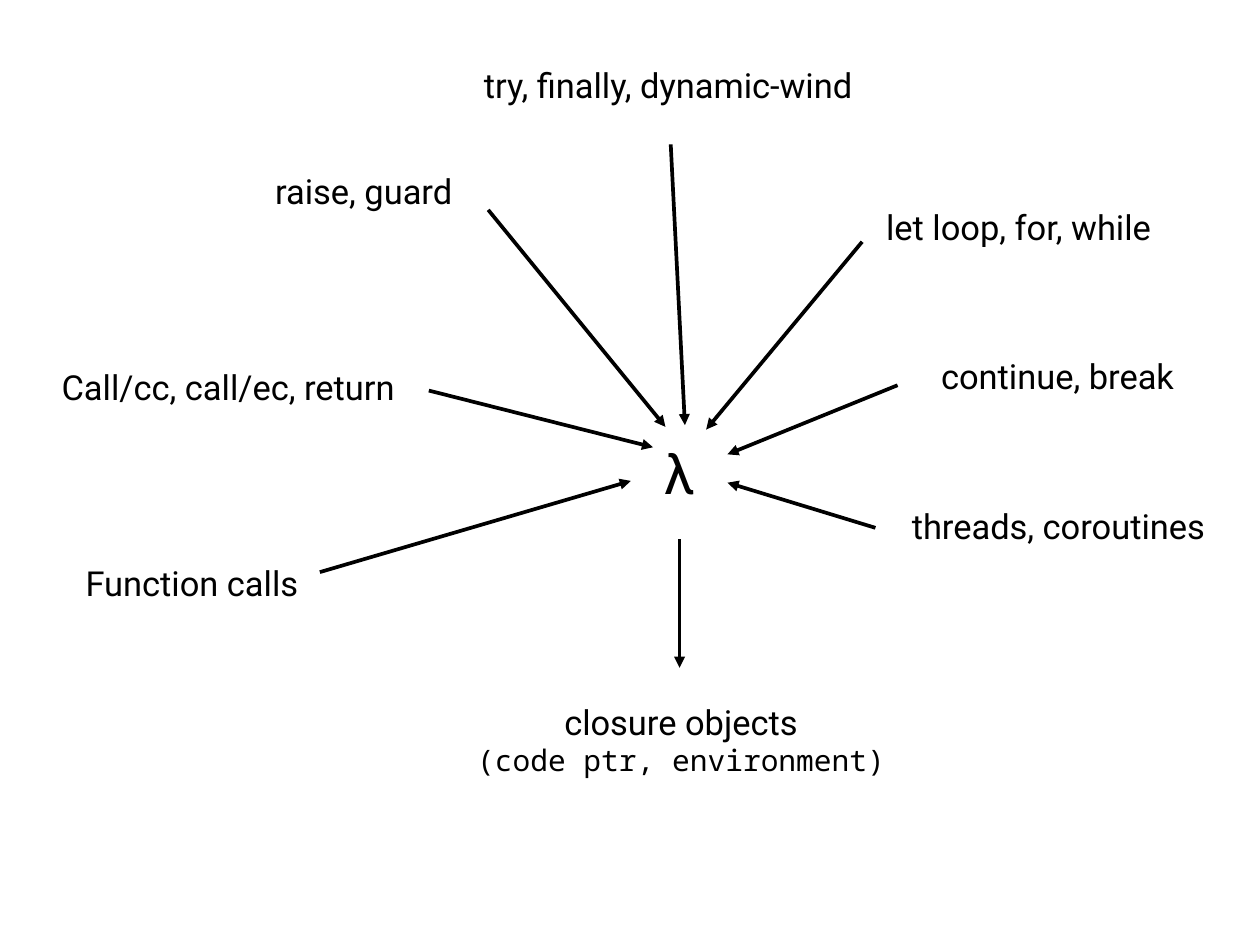
from pptx import Presentation
from pptx.dml.color import RGBColor
from pptx.enum.shapes import MSO_CONNECTOR
from pptx.enum.text import MSO_ANCHOR, MSO_AUTO_SIZE, PP_ALIGN
from pptx.oxml.ns import qn
from pptx.util import Inches, Pt
from lxml import etree

STRAIGHT = MSO_CONNECTOR.STRAIGHT
MIDDLE = MSO_ANCHOR.MIDDLE
CENTER = PP_ALIGN.CENTER
GROW = MSO_AUTO_SIZE.SHAPE_TO_FIT_TEXT

BLACK = "000000"
SANS, MONO = "Roboto", "Noto Sans Mono"
LABEL_HEIGHT = 0.57

# Concepts: text, (left, top, width) of the label, arrow start, arrow end
CONCEPTS = [
    ("Function calls", (0.9, 6.29, 2.53), (3.61, 6.46), (7.12, 5.43)),
    ("Call/cc, call/ec, return", (0.61, 4.08, 3.93), (4.84, 4.41), (7.37, 5.05)),
    ("raise, guard", (3.02, 1.87, 2.17), (5.51, 2.37), (7.51, 4.82)),
    ("try, finally, dynamic-wind", (5.34, 0.67, 4.4), (7.57, 1.63), (7.73, 4.8)),
    ("let loop, for, while", (9.91, 2.27, 3.17), (9.73, 2.73), (7.97, 4.85)),
    ("continue, break", (10.53, 3.96, 2.81), (10.13, 4.35), (8.21, 5.13)),
    ("threads, coroutines", (10.21, 5.65, 3.47), (9.88, 5.96), (8.21, 5.45)),
]
LAMBDA_BOX = (7.44, 4.91, 0.45, 0.84)
CLOSURE_BOX = (5.32, 7.87, 4.73, 0.96)
CLOSURE_ARROW = ((7.67, 6.09), (7.67, 7.54))


def rgb(color):
    return RGBColor.from_string(color)


def add_line(tf, text, first=True, size=28, font=SANS, color=BLACK):
    p = tf.paragraphs[0] if first else tf.add_paragraph()
    p.alignment = CENTER
    r = p.add_run()
    r.text = text
    r.font.size = Pt(size)
    r.font.name = font
    r.font.color.rgb = rgb(color)


def add_box(s, box):
    tf = s.shapes.add_textbox(*map(Inches, box)).text_frame
    tf.margin_left = tf.margin_right = Inches(0.06)
    tf.margin_top = tf.margin_bottom = Inches(0.06)
    tf.vertical_anchor = MIDDLE
    tf.word_wrap = False
    tf.auto_size = GROW
    return tf


def add_arrow(s, start, end):
    c = s.shapes.add_connector(STRAIGHT, *map(Inches, start + end))
    c.line.color.rgb = rgb(BLACK)
    c.line.width = Pt(3)
    etree.SubElement(c.line._get_or_add_ln(), qn("a:tailEnd"), type="triangle")
    etree.SubElement(c._element.spPr, qn("a:effectLst"))


prs = Presentation()
prs.slide_width, prs.slide_height = Inches(14.22), Inches(10.67)
s = prs.slides.add_slide(prs.slide_layouts[6])

# Lambda in the centre
add_line(add_box(s, LAMBDA_BOX), "λ", size=45)

# Concepts pointing to lambda
for text, box, start, end in CONCEPTS:
    add_line(add_box(s, box + (LABEL_HEIGHT,)), text)
    add_arrow(s, start, end)

# Closure objects below
add_arrow(s, *CLOSURE_ARROW)
tf = add_box(s, CLOSURE_BOX)
add_line(tf, "closure objects")
add_line(tf, "(code ptr, environment)", first=False, size=24, font=MONO)

prs.save("out.pptx")
